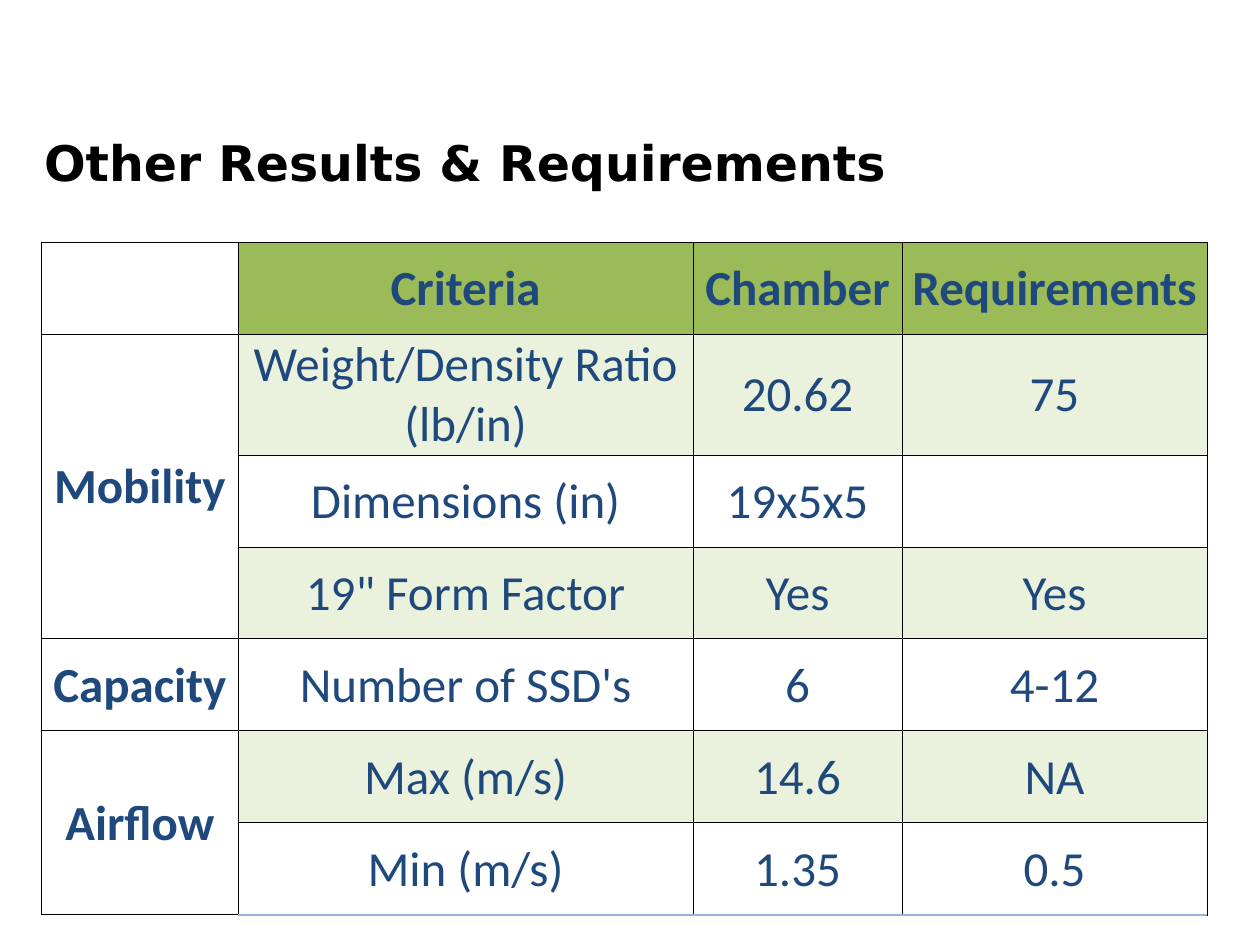
from lxml.etree import SubElement
from pptx import Presentation
from pptx.dml.color import RGBColor
from pptx.enum.text import MSO_ANCHOR, PP_ALIGN
from pptx.oxml.ns import qn
from pptx.util import Inches, Pt

TITLE = "Other Results & Requirements"
HEADER = ["", "Criteria", "Chamber", "Requirements"]
GROUPS = [
    ("Mobility", [
        ("Weight/Density Ratio (lb/in)", "20.62", "75"),
        ("Dimensions (in)", "19x5x5", ""),
        ('19" Form Factor', "Yes", "Yes"),
    ]),
    ("Capacity", [("Number of SSD's", "6", "4-12")]),
    ("Airflow", [
        ("Max (m/s)", "14.6", "NA"),
        ("Min (m/s)", "1.35", "0.5"),
    ]),
]
COLUMN_WIDTHS = [1.56, 3.61, 1.66, 2.42]
ROW_HEIGHT = 0.73
TABLE_LEFT, TABLE_TOP = 0.33, 1.92
BLACK, NAVY, GREEN, PALE_GREEN, PALE_BLUE = "000000", "1F497D", "9BBB59", "EAF1DD", "95B3D7"


def color(value):
    return RGBColor.from_string(value)


def style_font(font, name, shade, bold):
    font.name = name
    font.size = Pt(28)
    font.bold = bold
    font.color.rgb = color(shade)


def add_border(cell, side, shade, width):
    line = SubElement(cell._tc.get_or_add_tcPr(), qn(f"a:ln{side}"), w=str(Pt(width)))
    fill = SubElement(line, qn("a:solidFill"))
    SubElement(fill, qn("a:srgbClr"), val=shade)


def style_cell(cell, text, bold, fill, bottom):
    cell.margin_left = cell.margin_right = cell.margin_top = Inches(0.01)
    cell.margin_bottom = 0
    cell.vertical_anchor = MSO_ANCHOR.MIDDLE
    for side in "LRT":
        add_border(cell, side, BLACK, 0.5)
    add_border(cell, "B", *bottom)
    if fill:
        cell.fill.solid()
        cell.fill.fore_color.rgb = color(fill)
    else:
        cell.fill.background()
    if text:
        cell.text_frame.text = text
        para = cell.text_frame.paragraphs[0]
        para.alignment = PP_ALIGN.CENTER
        style_font(para.runs[0].font, "Calibri", NAVY, bold)


def add_title(page):
    title = page.shapes.title
    title.left, title.top, title.width, title.height = map(Inches, (0.25, 1, 8.58, 0.57))
    frame = title.text_frame
    frame.text = TITLE
    frame.word_wrap = True
    frame.vertical_anchor = MSO_ANCHOR.TOP
    para = frame.paragraphs[0]
    para.alignment = PP_ALIGN.LEFT
    style_font(para.runs[0].font, "DejaVu Sans", BLACK, True)


def add_results(page):
    rows = [HEADER]
    spans = []
    for group, items in GROUPS:
        spans.append((len(rows), len(items)))
        for index, item in enumerate(items):
            rows.append(["" if index else group, *item])

    table = page.shapes.add_table(
        len(rows), len(HEADER), Inches(TABLE_LEFT), Inches(TABLE_TOP),
        Inches(sum(COLUMN_WIDTHS)), Inches(ROW_HEIGHT * len(rows))).table
    table.first_row = table.horz_banding = False
    for column, width in zip(table.columns, COLUMN_WIDTHS):
        column.width = Inches(width)
    last = len(rows) - 1
    for r, values in enumerate(rows):
        table.rows[r].height = Inches(ROW_HEIGHT)
        band = GREEN if r == 0 else PALE_GREEN if r % 2 else None
        for c, text in enumerate(values):
            bottom = (PALE_BLUE, 1) if r == last and c else (BLACK, 0.5)
            style_cell(table.cell(r, c), text, r == 0 or c == 0, band if c else None, bottom)
    for start, count in spans:
        if count > 1:
            table.cell(start, 0).merge(table.cell(start + count - 1, 0))


def main():
    deck = Presentation()
    deck.slide_width, deck.slide_height = Inches(10), Inches(7.5)
    page = deck.slides.add_slide(deck.slide_layouts[5])
    add_title(page)
    add_results(page)
    deck.save("out.pptx")


if __name__ == "__main__":
    main()
